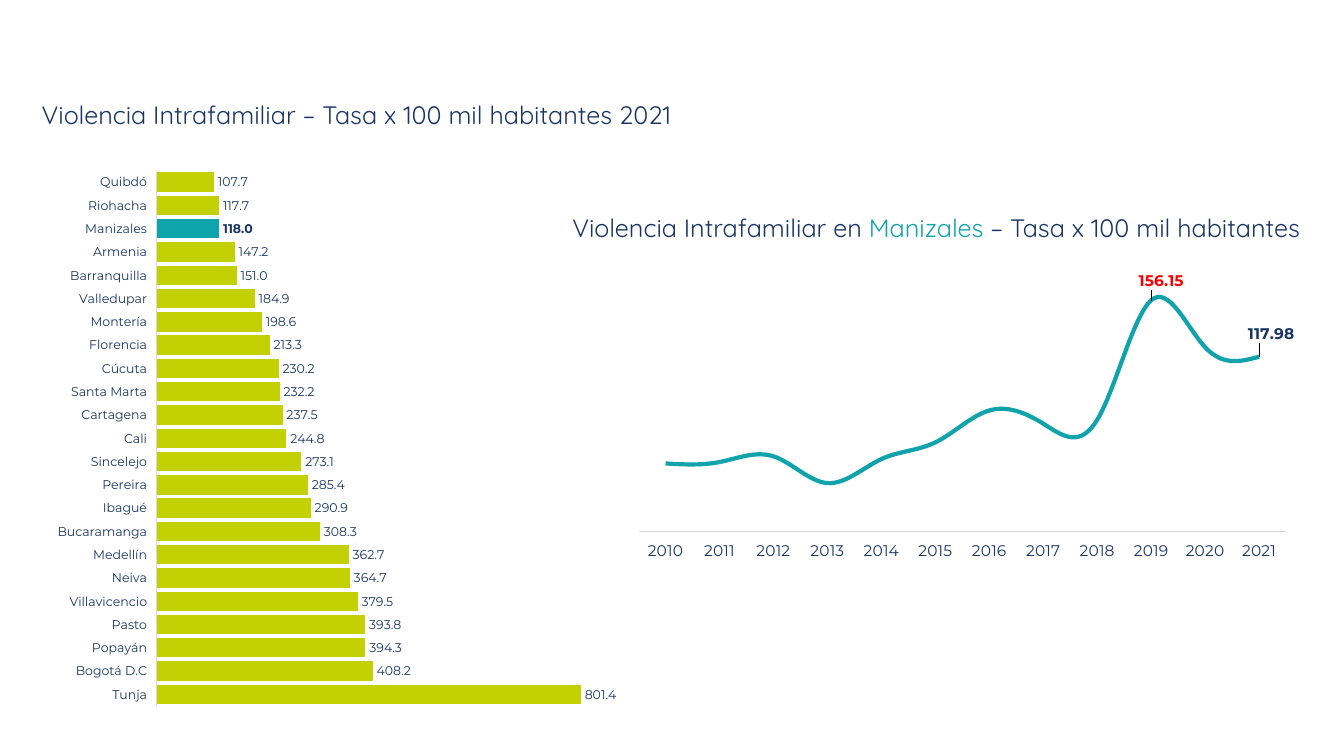
"""Build a slide comparing family violence rates by city and over time in Manizales."""
from dataclasses import dataclass

from lxml import etree
from pptx import Presentation
from pptx.chart.chart import Chart
from pptx.chart.data import CategoryChartData
from pptx.dml.color import RGBColor
from pptx.enum.chart import XL_CHART_TYPE, XL_LABEL_POSITION, XL_TICK_LABEL_POSITION, XL_TICK_MARK
from pptx.enum.text import MSO_AUTO_SIZE, PP_ALIGN
from pptx.oxml import parse_xml
from pptx.oxml.ns import qn
from pptx.slide import Slide
from pptx.util import Emu, Pt

BAR, LINE = XL_CHART_TYPE.BAR_CLUSTERED, XL_CHART_TYPE.LINE
ABOVE, OUTSIDE = XL_LABEL_POSITION.ABOVE, XL_LABEL_POSITION.OUTSIDE_END
NO_TICK, LOW = XL_TICK_MARK.NONE, XL_TICK_LABEL_POSITION.LOW
CENTER, GROW = PP_ALIGN.CENTER, MSO_AUTO_SIZE.SHAPE_TO_FIT_TEXT

EMU_PER_PX = 9144
COLORS = {
    "navy": "193566", "bar_navy": "183565", "teal": "10A3AB", "bar_teal": "0EA4AC",
    "lime": "C3D004", "red": "FF0000", "gray": "D9D9D9",
}
CHART_NS = "http://schemas.openxmlformats.org/drawingml/2006/chart"

CITY_RATES = {
    "Tunja": 801.4, "Bogotá D.C": 408.2, "Popayán": 394.3, "Pasto": 393.8,
    "Villavicencio": 379.5, "Neiva": 364.7, "Medellín": 362.7, "Bucaramanga": 308.3,
    "Ibagué": 290.9, "Pereira": 285.4, "Sincelejo": 273.1, "Cali": 244.8,
    "Cartagena": 237.5, "Santa Marta": 232.2, "Cúcuta": 230.2, "Florencia": 213.3,
    "Montería": 198.6, "Valledupar": 184.9, "Barranquilla": 151.0, "Armenia": 147.2,
    "Manizales": 118.0, "Riohacha": 117.7, "Quibdó": 107.7,
}
YEAR_RATES = dict(zip(
    map(str, range(2010, 2022)),
    (45.75, 46.71, 50.55, 32.46, 48.73, 60.02, 81.61, 72.67, 75.28, 156.15, 124.39, 117.98),
))


@dataclass(frozen=True)
class Box:
    left: int
    top: int
    width: int
    height: int

    def emu(self) -> list[Emu]:
        return [Emu(px * EMU_PER_PX) for px in (self.left, self.top, self.width, self.height)]


@dataclass(frozen=True)
class Title:
    box: Box
    spans: tuple[tuple[str, str], ...]


@dataclass(frozen=True)
class RateChart:
    box: Box
    kind: XL_CHART_TYPE
    rates: dict[str, float]
    number_format: str
    maximum: int
    plot_area: tuple[float, float, float, float]
    color: str
    size: int


@dataclass(frozen=True)
class Callout:
    year: str
    color: str
    shift: tuple[float, float]


TITLES = (
    Title(Box(-19, 94, 745, 40),
          (("Violencia Intrafamiliar – Tasa x 100 mil habitantes 2021", "navy"),)),
    Title(Box(523, 206, 811, 40),
          (("Violencia Intrafamiliar en ", "navy"), ("Manizales ", "teal"),
           ("– Tasa x 100 mil habitantes", "navy"))),
)
YEARS_CHART = RateChart(Box(620, 257, 669, 300), LINE, YEAR_RATES, "0.00", 180,
                        (0.02, 0.02, 0.96, 0.88), "navy", 11)
CITIES_CHART = RateChart(Box(57, 155, 592, 570), BAR, CITY_RATES, "#,##0.0", 900,
                         (0.158, 0.025, 0.806, 0.932), "bar_navy", 9)
CALLOUTS = (Callout("2019", "red", (0.015, -0.02)), Callout("2021", "navy", (0.018, -0.03)))


def rgb(name: str) -> RGBColor:
    return RGBColor.from_string(COLORS[name])


def set_font(font, color: str, **values) -> None:
    for name, value in values.items():
        setattr(font, name, value)
    font.color.rgb = rgb(color)


def manual_layout(**values: str | float) -> etree._Element:
    layout = parse_xml(f'<c:layout xmlns:c="{CHART_NS}"><c:manualLayout/></c:layout>')
    for name, value in values.items():
        etree.SubElement(layout[0], qn(f"c:{name}")).set("val", str(value))
    return layout


def add_title(page: Slide, title: Title) -> None:
    frame = page.shapes.add_textbox(*title.box.emu()).text_frame
    frame.word_wrap = True
    frame.auto_size = GROW
    para = frame.paragraphs[0]
    para.alignment = CENTER
    for text, color in title.spans:
        span = para.add_run()
        span.text = text
        set_font(span.font, color, name="Quicksand", size=Pt(18))


def add_rate_chart(page: Slide, design: RateChart) -> Chart:
    data = CategoryChartData(number_format=design.number_format)
    data.categories = list(design.rates)
    data.add_series("Series 1", list(design.rates.values()))
    chart = page.shapes.add_chart(design.kind, *design.box.emu(), data).chart
    chart.has_title = chart.has_legend = False
    chart.plots[0].vary_by_categories = False
    set_font(chart.font, design.color, name="Montserrat", size=Pt(design.size))

    rate_axis, name_axis = chart.value_axis, chart.category_axis
    axis_values = {"visible": False, "has_major_gridlines": False,
                   "minimum_scale": 0, "maximum_scale": design.maximum}
    for name, value in axis_values.items():
        setattr(rate_axis, name, value)
    name_axis.major_tick_mark = name_axis.minor_tick_mark = NO_TICK
    name_axis.tick_label_position = LOW
    name_axis.format.line.color.rgb = rgb("gray")
    name_axis.format.line.width = Pt(0.75)
    set_font(name_axis.tick_labels.font, design.color, name="Montserrat", size=Pt(design.size))

    plot_area = chart.element.find(f".//{qn('c:plotArea')}")
    for layout in plot_area.findall(qn("c:layout")):
        plot_area.remove(layout)
    left, top, width, height = design.plot_area
    plot_area.insert(0, manual_layout(layoutTarget="inner", xMode="edge", yMode="edge",
                                      x=left, y=top, w=width, h=height))
    return chart


def style_years(chart: Chart) -> None:
    series = chart.plots[0].series[0]
    series.smooth = True
    series.format.line.color.rgb = rgb("teal")
    series.format.line.width = Pt(3)
    series.data_labels.show_value = False
    years = list(YEAR_RATES)
    for callout in CALLOUTS:
        label = series.points[years.index(callout.year)].data_label
        set_font(label.font, callout.color, name="Montserrat", size=Pt(11), bold=True)
        label.position = ABOVE
    labels = chart.element.find(f".//{qn('c:ser')}/{qn('c:dLbls')}")
    for callout, label in zip(CALLOUTS, labels.findall(qn("c:dLbl"))):
        label.insert(1, manual_layout(x=callout.shift[0], y=callout.shift[1]))


def style_cities(chart: Chart) -> None:
    plot = chart.plots[0]
    plot.gap_width = 20
    series = plot.series[0]
    series.invert_if_negative = False
    series.format.fill.solid()
    series.format.fill.fore_color.rgb = rgb("lime")
    labels = series.data_labels
    label_values = {"show_value": True, "number_format": "#,##0.0",
                    "number_format_is_linked": False, "position": OUTSIDE}
    for name, value in label_values.items():
        setattr(labels, name, value)
    set_font(labels.font, "bar_navy", name="Montserrat", size=Pt(9))
    manizales = series.points[list(CITY_RATES).index("Manizales")]
    manizales.format.fill.solid()
    manizales.format.fill.fore_color.rgb = rgb("bar_teal")
    set_font(manizales.data_label.font, "bar_navy", name="Montserrat", size=Pt(9), bold=True)
    manizales.data_label.position = OUTSIDE


def main() -> None:
    deck = Presentation()
    deck.slide_width, deck.slide_height = Emu(1333 * EMU_PER_PX), Emu(750 * EMU_PER_PX)
    page = deck.slides.add_slide(deck.slide_layouts[6])
    style_years(add_rate_chart(page, YEARS_CHART))
    style_cities(add_rate_chart(page, CITIES_CHART))
    for title in TITLES:
        add_title(page, title)
    deck.save("out.pptx")


if __name__ == "__main__":
    main()
